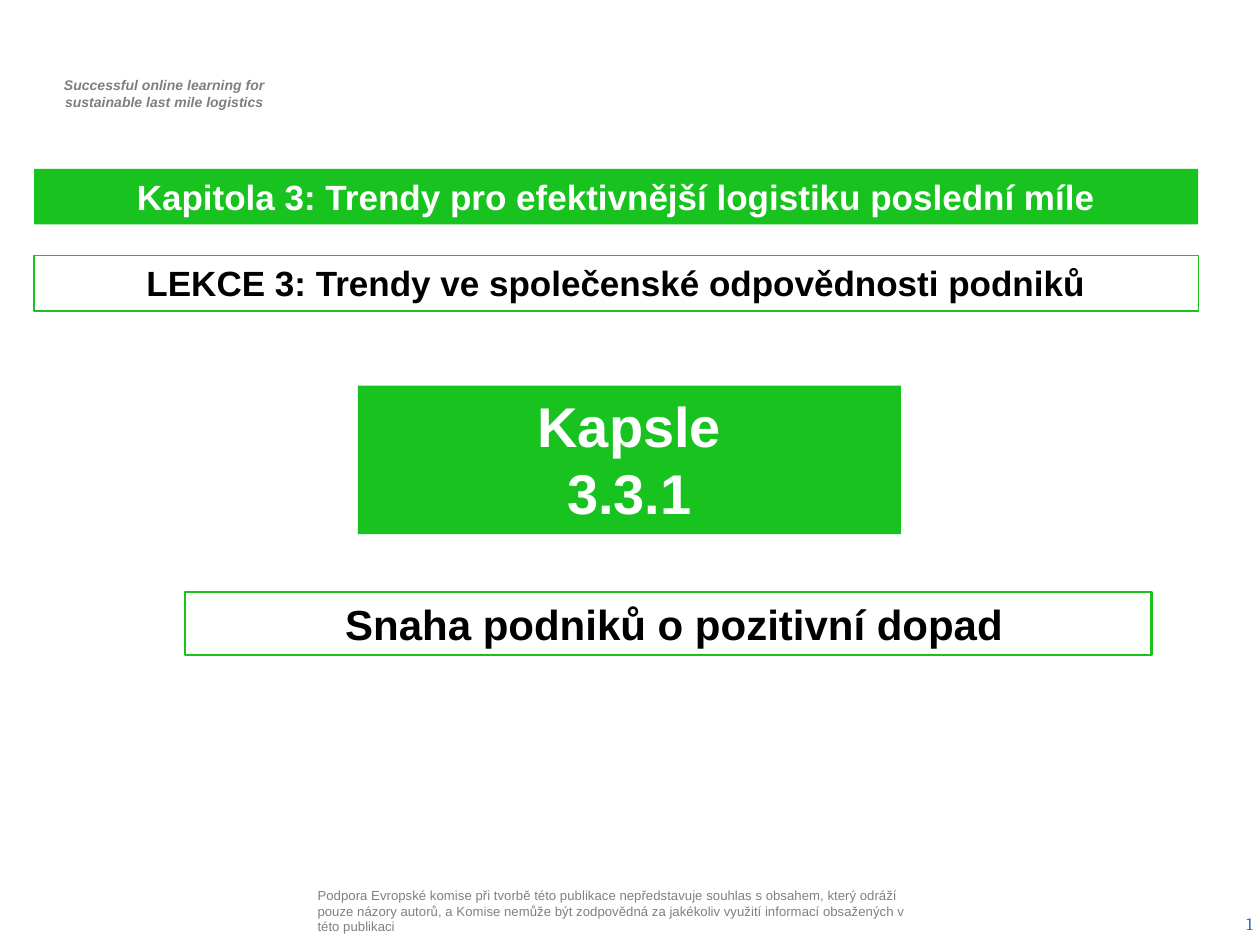
from dataclasses import dataclass

from lxml.etree import SubElement
from pptx import Presentation
from pptx.dml.color import RGBColor
from pptx.enum.shapes import MSO_SHAPE
from pptx.enum.text import MSO_ANCHOR, MSO_AUTO_SIZE, PP_ALIGN
from pptx.oxml.ns import qn
from pptx.util import Inches, Pt


@dataclass(frozen=True)
class Theme:
    font: str = "Arial"
    number_font: str = "Cambria"
    green: RGBColor = RGBColor(0x18, 0xC3, 0x20)
    white: RGBColor = RGBColor(0xFF, 0xFF, 0xFF)
    black: RGBColor = RGBColor(0, 0, 0)
    tagline_grey: RGBColor = RGBColor(0x7F, 0x7F, 0x7F)
    notice_grey: RGBColor = RGBColor(0x80, 0x80, 0x80)
    number_blue: RGBColor = RGBColor(0x33, 0x66, 0xCC)
    capsule_size: float = 32
    topic_size: float = 24
    heading_size: float = 20
    number_size: float = 10
    tagline_size: float = 8
    notice_size: float = 7.5


theme = Theme()


def write(shape, text, size, color, font=theme.font, bold=False, italic=False,
          align=PP_ALIGN.CENTER, anchor=MSO_ANCHOR.TOP, inset=(0.1, 0.05)):
    frame = shape.text_frame
    frame.text = text
    frame.word_wrap = True
    frame.auto_size = MSO_AUTO_SIZE.NONE
    frame.vertical_anchor = anchor
    frame.margin_left = frame.margin_right = Inches(inset[0])
    frame.margin_top = frame.margin_bottom = Inches(inset[1])
    for paragraph in frame.paragraphs:
        paragraph.alignment = align
        paragraph.space_before = Pt(0)
        for run in paragraph.runs:
            run.font.name, run.font.size = font, Pt(size)
            run.font.bold, run.font.italic = bold, italic
            run.font.color.rgb = color


prs = Presentation()
prs.slide_width, prs.slide_height = Inches(10), Inches(7.5)
slide = prs.slides.add_slide(prs.slide_layouts[5])
shapes = slide.shapes

# Project tagline and funding notice
tagline = shapes.add_textbox(Inches(0.29), Inches(0.56), Inches(2.03), Inches(0.37))
write(tagline, "Successful online learning for\nsustainable last mile logistics",
      theme.tagline_size, theme.tagline_grey, bold=True, italic=True)

notice = shapes.add_textbox(Inches(2.48), Inches(6.98), Inches(4.81), Inches(0.5))
write(notice, "Podpora Evropské komise při tvorbě této publikace nepředstavuje souhlas "
      "s obsahem, který odráží pouze názory autorů, a Komise nemůže být zodpovědná "
      "za jakékoliv využití informací obsažených v této publikaci",
      theme.notice_size, theme.notice_grey, align=PP_ALIGN.LEFT,
      anchor=MSO_ANCHOR.MIDDLE, inset=(0.04, 0.04))

# Slide number: the formatted run becomes a live field
number = shapes.add_textbox(Inches(7.71), Inches(7.13), Inches(2.33), Inches(0.4))
write(number, "1", theme.number_size, theme.number_blue, font=theme.number_font,
      align=PP_ALIGN.RIGHT, anchor=MSO_ANCHOR.MIDDLE)
number_paragraph = number.text_frame.paragraphs[0]
number_run = number_paragraph.runs[0]._r
number_field = SubElement(number_paragraph._p, qn("a:fld"), type="slidenum",
                          id="{B6F15528-21DE-4FAA-801E-634DDDAF4B2B}")
number_field.extend(list(number_run))
number_paragraph._p.remove(number_run)

# Chapter title in the title placeholder
chapter = shapes.title
chapter.left, chapter.top = Inches(0.27), Inches(1.34)
chapter.width, chapter.height = Inches(9.24), Inches(0.44)
chapter.fill.solid()
chapter.fill.fore_color.rgb = theme.green
write(chapter, "Kapitola 3: Trendy pro efektivnější logistiku poslední míle",
      theme.heading_size, theme.white, bold=True)

# Lesson, capsule and topic boxes: a line width of 0 means a filled box
boxes = [
    ("LEKCE 3: Trendy ve společenské odpovědnosti podniků",
     (0.27, 2.03, 9.24, 0.44), theme.heading_size, 0.75),
    ("Kapsle\n3.3.1", (2.84, 3.06, 4.31, 1.18), theme.capsule_size, 0),
    ("Snaha podniků o pozitivní dopad",
     (1.47, 4.7, 7.67, 0.5), theme.topic_size, 1.5),
]
for text, place, size, line_width in boxes:
    box = shapes.add_shape(MSO_SHAPE.RECTANGLE, *map(Inches, place))
    box.shadow.inherit = False
    if line_width:
        box.fill.background()
        box.line.color.rgb = theme.green
        box.line.width = Pt(line_width)
    else:
        box.fill.solid()
        box.fill.fore_color.rgb = theme.green
        box.line.fill.background()
    write(box, text, size, theme.black if line_width else theme.white, bold=True)

# The topic sits slightly right of its box centre
box.text_frame.margin_left = Inches(0.19)

prs.save("out.pptx")
